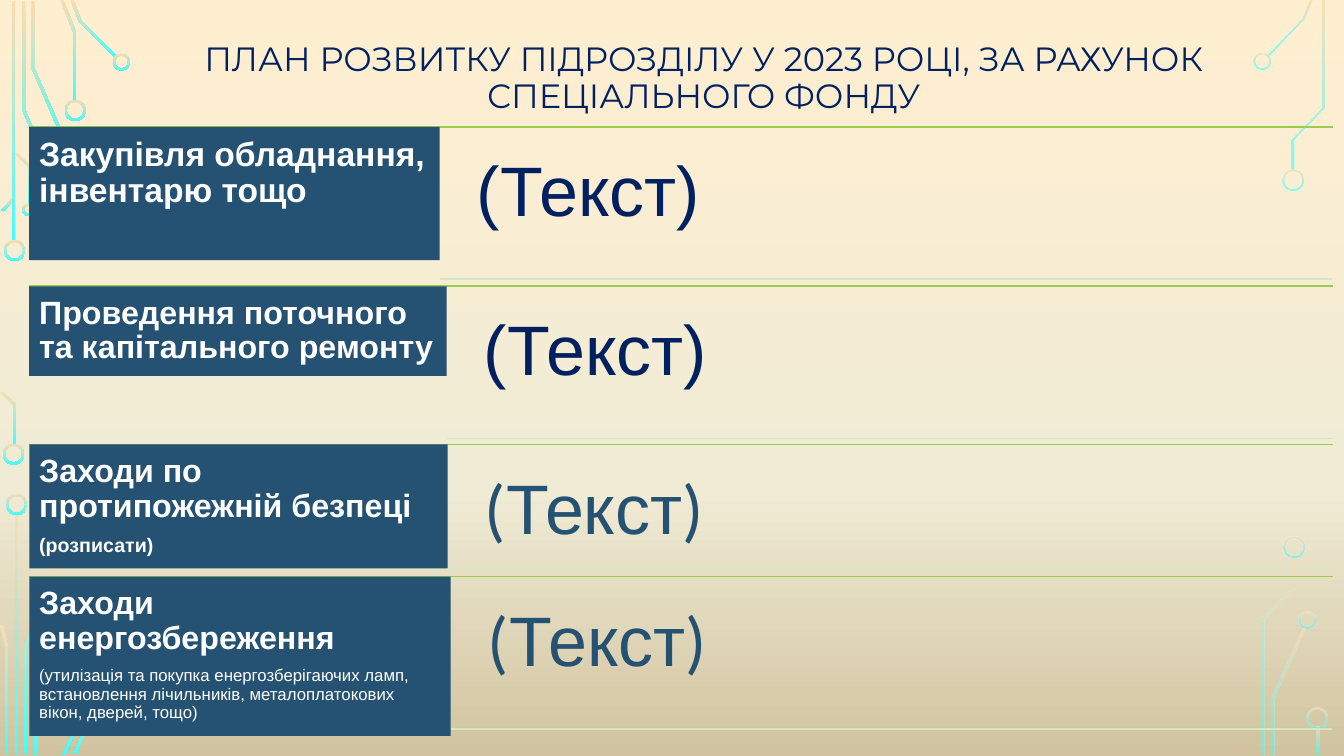
"""Build the slide with the 2023 development plan financed by the special fund."""
from lxml import etree
from pptx import Presentation
from pptx.dml.color import RGBColor
from pptx.enum.shapes import MSO_CONNECTOR, MSO_SHAPE
from pptx.enum.text import MSO_ANCHOR, PP_ALIGN
from pptx.oxml.ns import qn
from pptx.util import Pt

PX = 9144
LINE = MSO_CONNECTOR.STRAIGHT
RECT, RING = MSO_SHAPE.RECTANGLE, MSO_SHAPE.DONUT
TOP, MIDDLE = MSO_ANCHOR.TOP, MSO_ANCHOR.MIDDLE
LEFT, CENTER = PP_ALIGN.LEFT, PP_ALIGN.CENTER
COLORS = {"navy": "002060", "teal": "255272", "white": "FFFFFF",
          "green": "9ACD4C", "pale": "D4E8C2"}
BACKDROP = [(0, "FFEFD1", 100), (65, "F0EBD5", 100), (100, "D1C39F", 100)]
LEFT_GLOW = [(0, "FDDCB0", 100), (100, "40FFFF", 100)]
RIGHT_GLOW = [(0, "FDDCB0", 80), (100, "40FFFF", 60)]


def paint(fill, element, stops):
    """Apply a gradient that runs from top to bottom."""
    fill.gradient()
    fill.gradient_angle = 270
    stop_list = element.xpath(".//a:gsLst")[0]
    for old_stop in list(stop_list):
        stop_list.remove(old_stop)
    for position, color, opacity in stops:
        stop = etree.SubElement(stop_list, qn("a:gs"), pos=str(position * 1000))
        tint = etree.SubElement(stop, qn("a:srgbClr"), val=color)
        if opacity < 100:
            etree.SubElement(tint, qn("a:alpha"), val=str(opacity * 1000))


def write(frame, paragraphs, color, insets, anchor=TOP, align=LEFT):
    """Fill a frame with paragraphs of (text, size, font, bold) runs."""
    frame.word_wrap = True
    frame.vertical_anchor = anchor
    frame.margin_left = frame.margin_right = insets[0] * PX
    frame.margin_top = frame.margin_bottom = insets[1] * PX
    for index, runs in enumerate(paragraphs):
        para = frame.add_paragraph() if index else frame.paragraphs[0]
        para.alignment = align
        para.line_spacing = 0.9
        if index < len(paragraphs) - 1:
            para.space_after = Pt(8)
        for text, size, font, bold in runs:
            span = para.add_run()
            span.text = text
            span.font.size = Pt(size)
            span.font.name = font
            span.font.bold = bold
            span.font.color.rgb = RGBColor.from_string(COLORS[color])


deck = Presentation()
deck.slide_width, deck.slide_height = 1333 * PX, 750 * PX
page = deck.slides.add_slide(deck.slide_layouts[6])
paint(page.background.fill, page.background._cSld, BACKDROP)

TRACE_WIDTH = 3
traces = [
    [(60, 199), (22, 109), (22, 1)],
    [(70, 157), (31, 67), (31, 1)],
    [(60, 0), (73, 33), (73, 100)],
    [(70, 0), (78, 21), (114, 57)],
    [(12, 197), (1, 209)],
    [(0, 389), (13, 401), (13, 441)],
    [(14, 152), (28, 165), (28, 203)],
    [(62, 551), (24, 640), (24, 748)],
    [(0, 620), (5, 641), (5, 748)],
    [(72, 593), (34, 682), (34, 749)],
    [(76, 650), (76, 717), (62, 749)],
    [(117, 693), (81, 728), (73, 748)],
    [(1299, 0), (1291, 19), (1256, 55)],
    [(1292, 623), (1261, 693), (1261, 749)],
    [(1311, 1), (1311, 107), (1281, 138), (1281, 169)],
    [(1282, 552), (1282, 583), (1251, 613), (1251, 749)],
]
bars = [(12, 1, 239), (15, 510, 239), (1306, 721, 28)]
rings = [(4, 238, 21), (3, 440, 21), (64, 99, 21), (112, 53, 17),
         (22, 202, 12), (6, 490, 21), (1243, 52, 17), (1272, 168, 21),
         (1288, 607, 17), (1273, 532, 21), (1296, 702, 21)]

circuit = []
for trace in traces:
    far_edge = [(x + TRACE_WIDTH, y) for x, y in reversed(trace)]
    outline = page.shapes.build_freeform(*trace[0], scale=PX)
    outline.add_line_segments(trace[1:] + far_edge, close=True)
    circuit.append(outline.convert_to_shape())
for x, y, height in bars:
    circuit.append(page.shapes.add_shape(
        RECT, x * PX, y * PX, TRACE_WIDTH * PX, height * PX))
for x, y, size in rings:
    ring = page.shapes.add_shape(RING, x * PX, y * PX, size * PX, size * PX)
    ring.adjustments[0] = 2 / size
    circuit.append(ring)
for part in circuit:
    part.shadow.inherit = False
    part.line.fill.background()
    on_left = part.left < deck.slide_width / 2
    paint(part.fill, part._element, LEFT_GLOW if on_left else RIGHT_GLOW)

title = page.shapes.add_textbox(111 * PX, 27 * PX, 1174 * PX, 103 * PX)
heading = "ПЛАН РОЗВИТКУ ПІДРОЗДІЛУ У 2023 РОЦІ, ЗА РАХУНОК СПЕЦІАЛЬНОГО ФОНДУ"
write(title.text_frame, [[(heading, 24, "Montserrat", False)]], "navy",
      (10, 5), MIDDLE, CENTER)

LABEL_LEFT, RULE_RIGHT, CONTENT_RIGHT = 29, 1322, 1321
plain_entry = [("(Текст)", 50, "Arial", False)]
mixed_entry = [("(", 50, "Calibri", False), ("Текст", 50, "Arial", False),
               (")", 50, "Calibri", False)]
rows = [
    (126, 407, 132, 143, "navy", plain_entry,
     [[("Закупівля обладнання, інвентарю тощо", 24, "Arial", True)]]),
    (284, 414, 89, 143, "navy", plain_entry,
     [[("Проведення поточного та капітального ремонту", 23, "Arial", True)]]),
    (441, 415, 123, 115, "teal", mixed_entry,
     [[("Заходи по протипожежній безпеці", 23, "Arial", True)],
      [("(розписати)", 14, "Arial", True)]]),
    (572, 418, 158, 143, "teal", mixed_entry,
     [[("Заходи енергозбереження", 23, "Arial", True)],
      [("(утилізація та покупка енергозберігаючих ламп, встановлення "
        "лічильників, металоплатокових вікон, дверей, тощо)",
        12, "Arial", False)]]),
]
for top, width, height, entry_height, entry_color, entry, label_text in rows:
    label_right = LABEL_LEFT + width
    entry_left, entry_top = label_right + 16, top + 8
    entry_bottom = entry_top + entry_height
    for start, end, y, color in [
            (LABEL_LEFT, RULE_RIGHT, top, "green"),
            (label_right, CONTENT_RIGHT, entry_bottom, "pale")]:
        rule = page.shapes.add_connector(LINE, start * PX, y * PX, end * PX, y * PX)
        rule.line.width = Pt(1.25)
        rule.line.color.rgb = RGBColor.from_string(COLORS[color])
        etree.SubElement(rule._element.spPr, qn("a:effectLst"))
    label = page.shapes.add_shape(
        RECT, LABEL_LEFT * PX, top * PX, width * PX, height * PX)
    label.shadow.inherit = False
    label.fill.solid()
    label.fill.fore_color.rgb = RGBColor.from_string(COLORS["teal"])
    label.line.fill.background()
    write(label.text_frame, label_text, "white", (10, 10))
    entry_box = page.shapes.add_textbox(
        entry_left * PX, entry_top * PX,
        (CONTENT_RIGHT - entry_left) * PX, entry_height * PX)
    write(entry_box.text_frame, [entry], entry_color, (21, 21))

deck.save("out.pptx")
